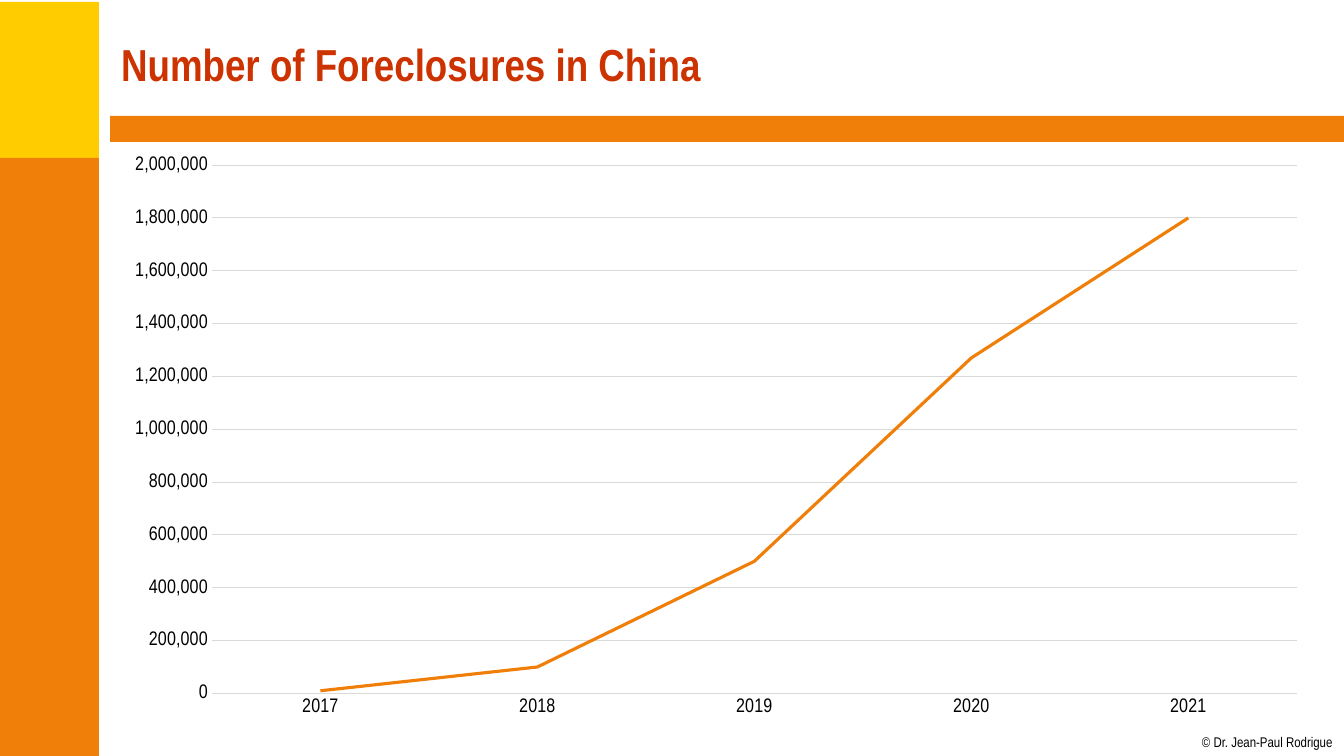
from pptx import Presentation
from pptx.chart.data import CategoryChartData
from pptx.dml.color import RGBColor
from pptx.enum.chart import XL_CHART_TYPE, XL_TICK_MARK
from pptx.enum.shapes import MSO_SHAPE
from pptx.enum.text import MSO_ANCHOR, PP_ALIGN
from pptx.util import Emu, Pt

FONT = "Arial Narrow"
ORANGE, YELLOW, RED = "F07F09", "FFCC00", "CC3300"
BLACK, GREY = "000000", "D9D9D9"
FORECLOSURES = {
    "2017": 10000,
    "2018": 100000,
    "2019": 500000,
    "2020": 1270000,
    "2021": 1800000,
}


def px(n):
    return Emu(round(n * 914400 / 100.8))


def box(*lengths):
    return [px(n) for n in lengths]


def rgb(color):
    return RGBColor.from_string(color)


def set_font(font, size, color=BLACK, bold=False):
    font.name, font.size, font.bold = FONT, Pt(size), bold
    font.color.rgb = rgb(color)


def set_line(line, color, width):
    line.color.rgb = rgb(color)
    line.width = Pt(width)


def add_band(s, bounds, color):
    sp = s.shapes.add_shape(MSO_SHAPE.RECTANGLE, *box(*bounds))
    sp.shadow.inherit = False
    sp.fill.solid()
    sp.fill.fore_color.rgb = rgb(color)
    sp.line.fill.background()


def add_title(s, bounds, text):
    sp = s.shapes.title
    sp.left, sp.top, sp.width, sp.height = box(*bounds)
    tf = sp.text_frame
    tf.vertical_anchor = MSO_ANCHOR.MIDDLE
    p = tf.paragraphs[0]
    p.text = text
    p.alignment = PP_ALIGN.LEFT
    set_font(p.font, 32, RED, bold=True)


def add_credit(s, bounds, text):
    tf = s.shapes.add_textbox(*box(*bounds)).text_frame
    tf.margin_left = tf.margin_top = tf.margin_right = tf.margin_bottom = 0
    tf.word_wrap = False
    p = tf.paragraphs[0]
    p.text = text
    set_font(p.font, 10)


def add_line_chart(s, bounds, values):
    data = CategoryChartData(number_format="#,##0")
    data.categories = list(values)
    data.add_series("Foreclosures", list(values.values()))
    chart = s.shapes.add_chart(XL_CHART_TYPE.LINE, *box(*bounds), data).chart
    chart.has_legend = chart.has_title = False
    set_font(chart.font, 14)

    # Line
    plot = chart.plots[0]
    plot.vary_by_categories = False
    series = plot.series[0]
    series.smooth = False
    set_line(series.format.line, ORANGE, 2.25)

    # Axes
    years, counts = chart.category_axis, chart.value_axis
    for axis in (years, counts):
        axis.major_tick_mark = axis.minor_tick_mark = XL_TICK_MARK.NONE
        set_font(axis.tick_labels.font, 14)
    set_line(years.format.line, GREY, 0.75)
    counts.format.line.fill.background()
    set_line(counts.major_gridlines.format.line, GREY, 0.75)
    counts.minimum_scale, counts.maximum_scale = 0, 2000000
    counts.major_unit = 200000
    counts.tick_labels.number_format = "#,##0"
    counts.tick_labels.number_format_is_linked = False


def main():
    prs = Presentation()
    prs.slide_width, prs.slide_height = box(1344, 756)
    s = prs.slides.add_slide(prs.slide_layouts[5])

    # Frame
    add_band(s, (-2, 2, 101, 159), YELLOW)
    add_band(s, (-2, 158, 101, 598), ORANGE)
    add_band(s, (110, 116, 1234, 26), ORANGE)
    add_credit(s, (1202, 734, 132, 17), "© Dr. Jean-Paul Rodrigue")

    # Content
    add_title(s, (111, 11, 1210, 105), "Number of Foreclosures in China")
    add_line_chart(s, (111, 144, 1210, 584), FORECLOSURES)

    prs.save("out.pptx")


if __name__ == "__main__":
    main()
